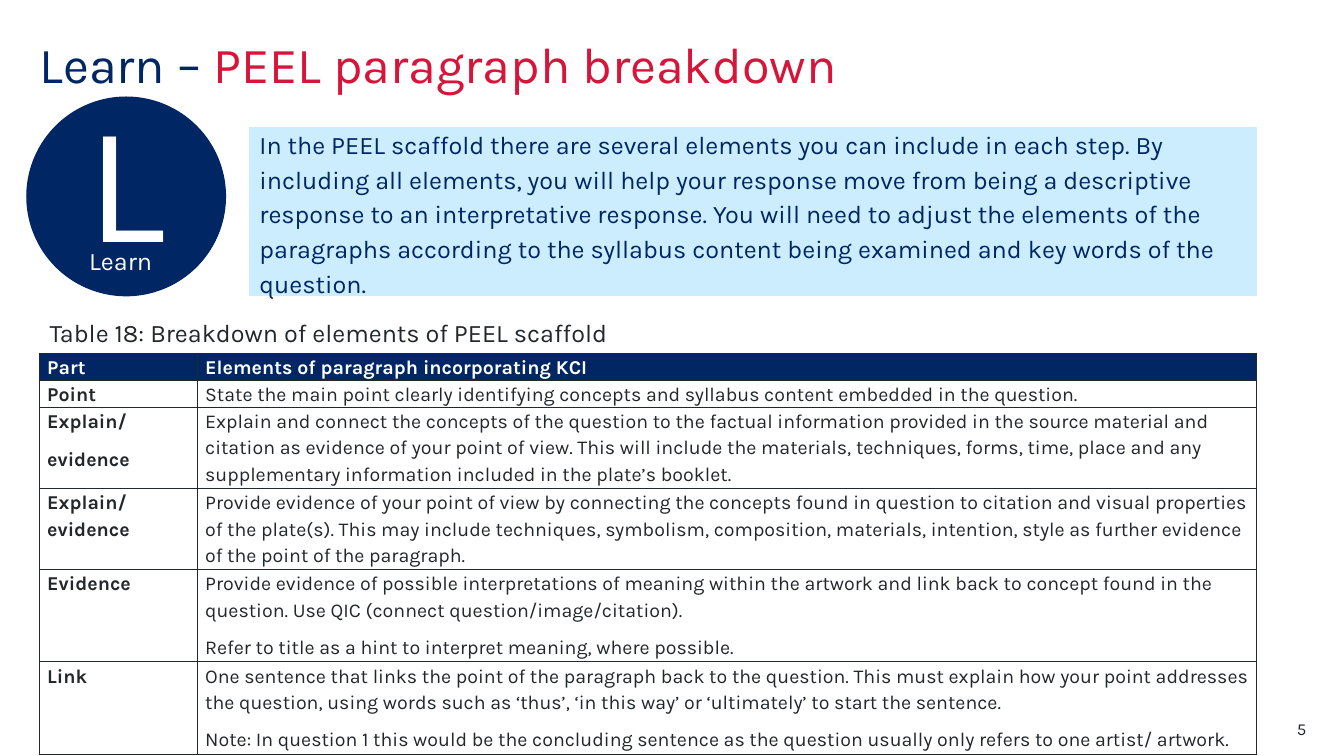
"""Build the slide on the elements of a PEEL paragraph."""
import pptx
import pptx.util
import pptx.dml.color
import pptx.enum.shapes
import pptx.enum.text
import pptx.oxml
import pptx.oxml.ns

Cm, Pt = pptx.util.Cm, pptx.util.Pt
ALIGN = pptx.enum.text.PP_ALIGN
ANCHOR = pptx.enum.text.MSO_ANCHOR
SHAPE = pptx.enum.shapes.MSO_SHAPE
HUES = {"navy": "002664", "red": "D7153A", "sky": "CBEDFD", "ink": "22272B", "white": "FFFFFF"}


def paint(color, hue):
    """Set a colour by its name."""
    color.rgb = pptx.dml.color.RGBColor.from_string(HUES[hue])


def write(frame, paras, size, hue, bold=False, inset=(0, 0, 0, 0), **form):
    """Fill a frame with paragraphs, each a list of text and colour pairs or a string."""
    frame.word_wrap = True
    sides = ("left", "top", "right", "bottom")
    for side, gap in zip(sides, inset):
        setattr(frame, f"margin_{side}", Cm(gap))
    for i, para in enumerate(paras):
        line = frame.paragraphs[0] if i == 0 else frame.add_paragraph()
        for name, value in form.items():
            if name != "space_before" or i:
                setattr(line, name, value)
        for text, tint in [(para, hue)] if isinstance(para, str) else para:
            run = line.add_run()
            run.text = text
            for name, value in {"name": "Karla", "size": Pt(size), "bold": bold}.items():
                setattr(run.font, name, value)
            paint(run.font.color, tint)


deck = pptx.Presentation()
deck.slide_width, deck.slide_height = Cm(33.87), Cm(19.05)
slide = deck.slides.add_slide(deck.slide_layouts[6])
shapes = slide.shapes

title = shapes.add_textbox(Cm(1), Cm(1), Cm(28), Cm(2.8))
write(title.text_frame, [[("Learn – ", "navy"), ("PEEL paragraph breakdown", "red")]],
      36, "navy", line_spacing=0.9)

intro = (
    "In the PEEL scaffold there are several elements you can include in each step. "
    "By including all elements, you will help your response move from being a descriptive "
    "response to an interpretative response. You will need to adjust the elements of the "
    "paragraphs according to the syllabus content being examined and key words of the question."
)
blocks = [
    (SHAPE.OVAL, (0.68, 2.45, 5, 5), "navy", "L", 120, "white", (0.25, 0, 0.25, 1.04),
     {"alignment": ALIGN.CENTER}),
    (SHAPE.RECTANGLE, (6.29, 3.21, 25.37, 4.24), "sky", intro, 18, "navy",
     (0.25, 0.13, 0.25, 0.13), {"alignment": ALIGN.LEFT, "line_spacing": 1.15}),
]
for kind, box, fill, text, size, hue, inset, form in blocks:
    block = shapes.add_shape(kind, *map(Cm, box))
    block.shadow.inherit = False
    block.fill.solid()
    paint(block.fill.fore_color, fill)
    paint(block.line.color, fill)
    block.line.width = Pt(1)
    block.text_frame.vertical_anchor = ANCHOR.MIDDLE
    write(block.text_frame, [text], size, hue, inset=inset, **form)

labels = [
    ((2.25, 6.17, 1.85, 1.22), "Learn", 18, "white", (0, 0, 0, 0), ALIGN.LEFT),
    ((1, 7.86, 20.68, 1.02), "Table 18: Breakdown of elements of PEEL scaffold", 18, "ink",
     (0.25, 0.13, 0.25, 0.13), ALIGN.LEFT),
    ((30.92, 18.1, 2, 0.5), "5", 12, "ink", (0, 0, 0, 0), ALIGN.RIGHT),
]
for box, text, size, hue, inset, align in labels:
    label = shapes.add_textbox(*map(Cm, box))
    write(label.text_frame, [text], size, hue, inset=inset, alignment=align)

rows = [
    (0.5, ["Part"], ["Elements of paragraph incorporating KCI"]),
    (0.5, ["Point"], [
        "State the main point clearly identifying concepts and syllabus content embedded "
        "in the question."]),
    (1.65, ["Explain/", "evidence"], [
        "Explain and connect the concepts of the question to the factual information provided "
        "in the source material and citation as evidence of your point of view. This will "
        "include the materials, techniques, forms, time, place and any supplementary "
        "information included in the plate’s booklet."]),
    (1.65, ["Explain/ evidence"], [
        "Provide evidence of your point of view by connecting the concepts found in question "
        "to citation and visual properties of the plate(s). This may include techniques, "
        "symbolism, composition, materials, intention, style as further evidence of the point "
        "of the paragraph."]),
    (1.93, ["Evidence"], [
        "Provide evidence of possible interpretations of meaning within the artwork and link "
        "back to concept found in the question. Use QIC (connect question/image/citation).",
        "Refer to title as a hint to interpret meaning, where possible."]),
    (1.93, ["Link"], [
        "One sentence that links the point of the paragraph back to the question. This must "
        "explain how your point addresses the question, using words such as ‘thus’, "
        "‘in this way’ or ‘ultimately’ to start the sentence.",
        "Note: In question 1 this would be the concluding sentence as the question usually "
        "only refers to one artist/ artwork."]),
]
widths = (3.98, 26.69)
table = shapes.add_table(len(rows), 2, Cm(1), Cm(8.9), Cm(sum(widths)),
                         Cm(sum(row[0] for row in rows))).table
table.horz_banding = False
for col, width in zip(table.columns, widths):
    col.width = Cm(width)
for r, (height, *texts) in enumerate(rows):
    table.rows[r].height = Cm(height)
    for c, paras in enumerate(texts):
        cell = table.cell(r, c)
        write(cell.text_frame, paras, 14, "ink" if r else "white", bold=r == 0 or c == 0,
              line_spacing=1.15, space_before=Pt(4), space_after=Pt(4))
        cell.margin_left, cell.margin_right = Cm(0.19), Cm(0.16)
        cell.margin_top = cell.margin_bottom = 0
        props = cell._tc.get_or_add_tcPr()
        for side in ("L", "R", "T", "B"):
            props.append(pptx.oxml.parse_xml(
                f'<a:ln{side} {pptx.oxml.ns.nsdecls("a")} w="12700"><a:solidFill>'
                f'<a:srgbClr val="{HUES["ink"]}"/></a:solidFill></a:ln{side}>'))
        cell.fill.solid()
        paint(cell.fill.fore_color, "white" if r else "navy")

deck.save("out.pptx")
